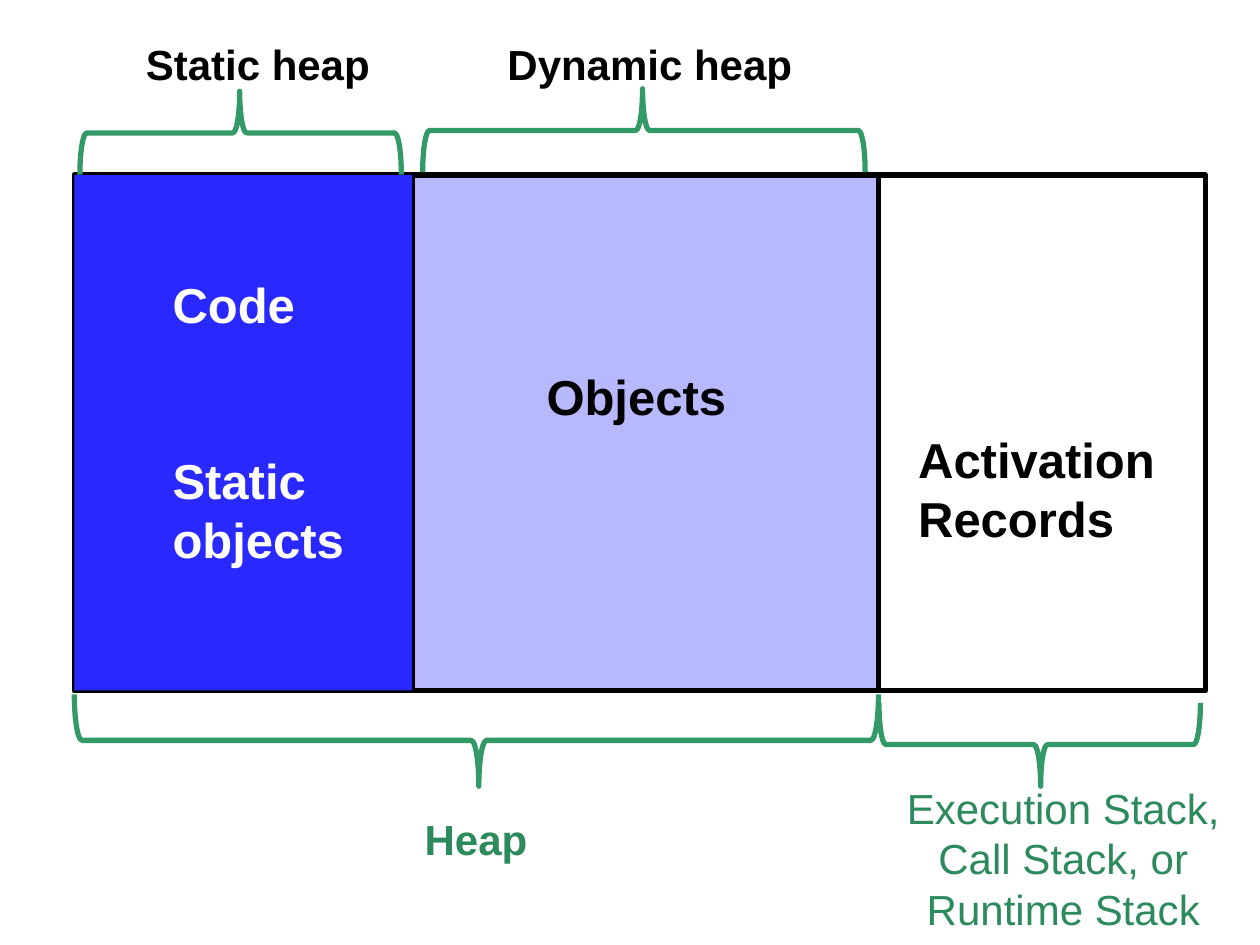
from pptx import Presentation
from pptx import util as u
from pptx.dml.color import RGBColor
from pptx.enum import shapes, text
from pptx.oxml import parse_xml
from pptx.oxml.ns import nsdecls

BLACK, WHITE = "000000", "FFFFFF"
STATIC_BLUE, DYNAMIC_BLUE = "2929FF", "B8B8FF"
BRACE_GREEN, LABEL_GREEN = "339966", "2D8A5C"
LINE_WIDTH = u.Pt(3)
LINE_SPACING = 1.2  # line height as a multiple of the text size

# The memory bar: three regions side by side
BAR_LEFT, BAR_TOP, BAR_WIDTH, BAR_HEIGHT = 1.5, 3.53, 22.81, 10.39
STATIC_WIDTH, HEAP_WIDTH = 6.81, 16.21


def color(hex_value):
    return RGBColor.from_string(hex_value)


def style_line(line, hex_value):
    line.color.rgb = color(hex_value)
    line.width = LINE_WIDTH


def add_region(slide, width, fill=None, outline=BLACK):
    """Add a rectangle that starts at the left end of the memory bar."""
    region = slide.shapes.add_shape(
        shapes.MSO_SHAPE.RECTANGLE,
        u.Cm(BAR_LEFT), u.Cm(BAR_TOP), u.Cm(width), u.Cm(BAR_HEIGHT))
    region.shadow.inherit = False
    if fill:
        region.fill.solid()
        region.fill.fore_color.rgb = color(fill)
    else:
        region.fill.background()
    if outline:
        style_line(region.line, outline)
    else:
        region.line.fill.background()


def add_brace(slide, left, top, span, depth, rotation):
    """Add a horizontal brace; left, top, span and depth are as seen."""
    offset = (span - depth) / 2
    brace = slide.shapes.add_shape(
        shapes.MSO_SHAPE.LEFT_BRACE,
        u.Cm(left + offset), u.Cm(top - offset), u.Cm(depth), u.Cm(span))
    brace.rotation = rotation
    brace.adjustments[0] = 0.083
    brace.adjustments[1] = 0.503
    brace.shadow.inherit = False
    brace.fill.background()
    style_line(brace.line, BRACE_GREEN)


def add_divider(slide, x):
    divider = slide.shapes.add_connector(
        shapes.MSO_CONNECTOR.STRAIGHT,
        u.Cm(x), u.Cm(BAR_TOP), u.Cm(x), u.Cm(BAR_TOP + BAR_HEIGHT))
    style_line(divider.line, BLACK)
    divider._element.spPr.append(parse_xml(f"<a:effectLst {nsdecls('a')}/>"))


def add_label(slide, lines, box, size, hex_value, bold=True, centred=False):
    """Add one paragraph per line and return the paragraphs."""
    label = slide.shapes.add_textbox(*(u.Cm(length) for length in box))
    frame = label.text_frame
    frame.word_wrap = centred
    frame.auto_size = (text.MSO_AUTO_SIZE.NONE if centred
                       else text.MSO_AUTO_SIZE.SHAPE_TO_FIT_TEXT)
    for index, line in enumerate(lines):
        paragraph = frame.add_paragraph() if index else frame.paragraphs[0]
        paragraph.alignment = text.PP_ALIGN.CENTER if centred else text.PP_ALIGN.LEFT
        paragraph.line_spacing = u.Pt(size * LINE_SPACING)
        run = paragraph.add_run()
        run.text = line
        run.font.name = "Arial"
        run.font.size = u.Pt(size)
        run.font.bold = bold
        run.font.color.rgb = color(hex_value)
    return frame.paragraphs


def main():
    presentation = Presentation()
    presentation.slide_width, presentation.slide_height = u.Cm(25.4), u.Cm(19.05)
    slide = presentation.slides.add_slide(presentation.slide_layouts[6])

    add_label(slide, ["Execution Stack,", "Call Stack, or", "Runtime Stack"],
              (17.75, 15.65, 7.37, 1.27), 24, LABEL_GREEN, bold=False, centred=True)
    add_region(slide, BAR_WIDTH)
    add_brace(slide, BAR_LEFT, 14, HEAP_WIDTH, 1.85, 270)
    add_brace(slide, 17.72, 14.17, 6.48, 1.68, 270)
    add_label(slide, ["Heap"], (8.31, 16.28, 2.62, 1.27), 24, LABEL_GREEN)

    add_region(slide, HEAP_WIDTH, DYNAMIC_BLUE)
    add_divider(slide, BAR_LEFT + STATIC_WIDTH)
    add_brace(slide, 1.61, 1.84, 6.48, 1.68, 90)
    add_brace(slide, 8.52, 1.79, 8.92, 1.68, 90)
    add_label(slide, ["Static heap"], (2.69, 0.66, 5.08, 1.27), 24, BLACK)
    add_label(slide, ["Dynamic heap"], (9.98, 0.66, 6.3, 1.27), 24, BLACK)

    add_region(slide, STATIC_WIDTH, STATIC_BLUE, outline=None)
    contents = add_label(slide, ["Code", "Static", "objects"],
                         (3.23, 5.41, 4.01, 6.25), 28, WHITE)
    contents[1].space_before = u.Pt(2 * 28 * LINE_SPACING)
    add_label(slide, ["Objects"], (10.77, 7.26, 4.17, 1.45), 28, BLACK)
    add_label(slide, ["Activation", "Records"], (18.26, 8.53, 5.33, 2.64), 28, BLACK)

    presentation.save("out.pptx")


if __name__ == "__main__":
    main()
